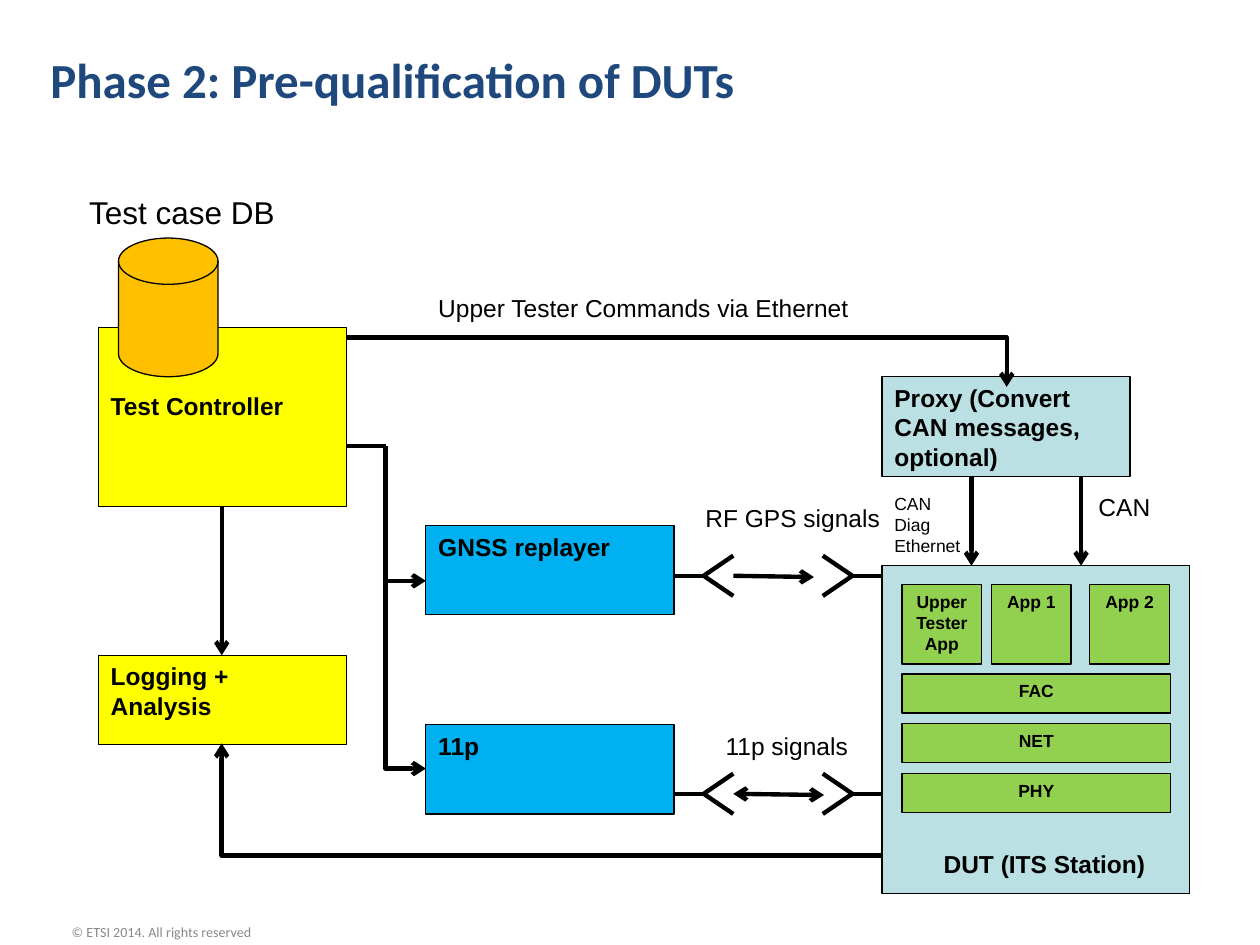
from lxml.etree import SubElement
from pptx import Presentation
from pptx.dml.color import RGBColor
from pptx.enum.shapes import MSO_CONNECTOR as Connector, MSO_SHAPE as Shape
from pptx.enum.text import MSO_ANCHOR as Anchor, PP_ALIGN as Align
from pptx.oxml.ns import qn
from pptx.util import Inches, Pt

BLACK = RGBColor(0x00, 0x00, 0x00)
NAVY = RGBColor(0x1F, 0x49, 0x7D)
GRAY = RGBColor(0x89, 0x89, 0x89)
YELLOW = RGBColor(0xFF, 0xFF, 0x00)
ORANGE = RGBColor(0xFF, 0xC0, 0x00)
BLUE = RGBColor(0x00, 0xB0, 0xF0)
PALE = RGBColor(0xBB, 0xE0, 0xE3)
GREEN = RGBColor(0x92, 0xD0, 0x50)

TITLE = "Phase 2: Pre-qualification of DUTs"
FOOTER = "© ETSI 2014. All rights reserved"

# text, fill, (left, top, width, height), top inset
BOXES = [
    ("Test Controller", YELLOW, (0.78, 2.6, 1.97, 1.42), 0.5),
    ("Logging + Analysis", YELLOW, (0.78, 5.2, 1.97, 0.71), 0.05),
    ("GNSS replayer", BLUE, (3.38, 4.17, 1.97, 0.71), 0.05),
    ("11p", BLUE, (3.38, 5.75, 1.97, 0.71), 0.05),
    ("Proxy (Convert CAN messages, optional)", PALE, (7, 2.99, 1.97, 0.79), 0.05),
    ("", PALE, (7, 4.49, 2.44, 2.6), 0.05),
]
DATABASE = (0.94, 1.89, 0.79, 1.1)

APPS = [("Upper Tester\nApp", 7.16), ("App 1", 7.87), ("App 2", 8.65)]
APP_TOP, APP_SIZE = 4.64, 0.63
LAYERS = ["FAC", "NET", "PHY"]
LAYER_LEFT, LAYER_TOP, LAYER_WIDTH, LAYER_HEIGHT, LAYER_STEP = 7.16, 5.35, 2.13, 0.31, 0.395

# text, (left, top, width, height), size, bold, wrap
LABELS = [
    ("Test case DB", (0.61, 1.48, 1.69, 0.4), 18, False, False),
    ("Upper Tester Commands via Ethernet", (3.38, 2.28, 3.94, 0.34), 14, False, True),
    ("RF GPS signals", (5.5, 3.94, 1.6, 0.34), 14, False, False),
    ("11p signals", (5.66, 5.75, 1.18, 0.34), 14, False, False),
    ("CAN", (8.62, 3.86, 0.67, 0.34), 14, False, False),
    ("CAN\nDiag\nEthernet", (7, 3.86, 0.73, 0.6), 10, False, False),
    ("DUT (ITS Station)", (7.39, 6.69, 1.81, 0.34), 14, True, False),
]

# begin, end, arrow ends
LINES = [
    ((2.75, 3.54), (3.06, 3.54), ()),
    ((1.76, 4.02), (1.76, 5.2), ("tailEnd",)),
    ((7.71, 3.78), (7.71, 4.49), ("tailEnd",)),
    ((8.58, 3.78), (8.58, 4.49), ("tailEnd",)),
    ((5.82, 4.57), (6.46, 4.58), ("tailEnd",)),
    ((5.82, 6.3), (6.54, 6.31), ("headEnd", "tailEnd")),
]
# begin, end, whether the first leg is vertical
ELBOWS = [
    ((2.75, 2.68), (7.99, 3.07), False),
    ((6.99, 6.79), (1.76, 5.9), False),
    ((3.06, 3.54), (3.38, 4.61), True),
    ((3.06, 4.57), (3.38, 6.1), True),
]
ANTENNA_HEIGHTS = [4.57, 6.3]
ANTENNA_SIDES = [(5.35, 1), (7, -1)]


def write_text(frame, text, size=14, color=BLACK, bold=False, font="Arial",
               align=Align.LEFT, anchor=Anchor.TOP, wrap=True, top=0.05):
    frame.word_wrap = wrap
    frame.vertical_anchor = anchor
    frame.margin_top = Inches(top)
    frame.text = text
    for paragraph in frame.paragraphs:
        paragraph.alignment = align
        for run in paragraph.runs:
            run.font.size = Pt(size)
            run.font.bold = bold
            run.font.name = font
            run.font.color.rgb = color


def add_box(slide, bounds, fill, kind=Shape.RECTANGLE):
    shape = slide.shapes.add_shape(kind, *map(Inches, bounds))
    shape.shadow.inherit = False
    shape.fill.solid()
    shape.fill.fore_color.rgb = fill
    shape.line.color.rgb = BLACK
    shape.line.width = Pt(0.75)
    return shape


def add_label(slide, text, bounds, **style):
    write_text(slide.shapes.add_textbox(*map(Inches, bounds)).text_frame, text, **style)


def add_line(slide, begin, end, arrows=(), kind=Connector.STRAIGHT):
    line = slide.shapes.add_connector(kind, *map(Inches, begin + end))
    line.line.color.rgb = BLACK
    line.line.width = Pt(2.5)
    for arrow in arrows:
        SubElement(line.line._get_or_add_ln(), qn("a:" + arrow), type="arrow")
    SubElement(line._element.spPr, qn("a:effectLst"))
    return line


def add_elbow(slide, begin, end, vertical_first):
    """Add an arrow with one corner; vertical-first ones are a flipped elbow turned by 270°."""
    if vertical_first:
        (x1, y1), (x2, y2) = begin, end
        center_x, center_y = (x1 + x2) / 2, (y1 + y2) / 2
        half_width, half_height = (y2 - y1) / 2, (x2 - x1) / 2
        begin = (center_x + half_width, center_y - half_height)
        end = (center_x - half_width, center_y + half_height)
    elbow = add_line(slide, begin, end, ("tailEnd",), Connector.ELBOW)
    properties = elbow._element.spPr
    properties.find(qn("a:prstGeom")).set("prst", "bentConnector2")
    if vertical_first:
        properties.find(qn("a:xfrm")).set("rot", str(270 * 60000))


def add_antenna(slide, x, y, direction):
    fork = (x + direction * 0.235, y)
    add_line(slide, (x, y), fork)
    for rise in (-0.16, 0.16):
        add_line(slide, fork, (x + direction * 0.47, y + rise))


def main():
    presentation = Presentation()
    presentation.slide_width, presentation.slide_height = Inches(10), Inches(7.5)
    slide = presentation.slides.add_slide(presentation.slide_layouts[5])

    title = slide.shapes.title
    title.left, title.top, title.width, title.height = map(Inches, (0.3, 0, 9, 1.25))
    write_text(title.text_frame, TITLE, size=28, color=NAVY, bold=True,
               font="Calibri", anchor=Anchor.MIDDLE)
    add_label(slide, FOOTER, (0.47, 7.2, 5.7, 0.4), size=8, color=GRAY,
              font="Calibri", anchor=Anchor.MIDDLE)

    for text, fill, bounds, top in BOXES:
        box = add_box(slide, bounds, fill)
        if text:
            write_text(box.text_frame, text, bold=True, top=top)
    add_box(slide, DATABASE, ORANGE, Shape.FLOWCHART_MAGNETIC_DISK)

    blocks = [(text, (left, APP_TOP, APP_SIZE, APP_SIZE)) for text, left in APPS]
    blocks += [(text, (LAYER_LEFT, LAYER_TOP + i * LAYER_STEP, LAYER_WIDTH, LAYER_HEIGHT))
               for i, text in enumerate(LAYERS)]
    for text, bounds in blocks:
        write_text(add_box(slide, bounds, GREEN).text_frame, text, size=10,
                   bold=True, align=Align.CENTER)

    for line in LINES:
        add_line(slide, *line)
    for elbow in ELBOWS:
        add_elbow(slide, *elbow)
    for y in ANTENNA_HEIGHTS:
        for x, direction in ANTENNA_SIDES:
            add_antenna(slide, x, y, direction)

    for text, bounds, size, bold, wrap in LABELS:
        add_label(slide, text, bounds, size=size, bold=bold, wrap=wrap)

    presentation.save("out.pptx")


if __name__ == "__main__":
    main()
